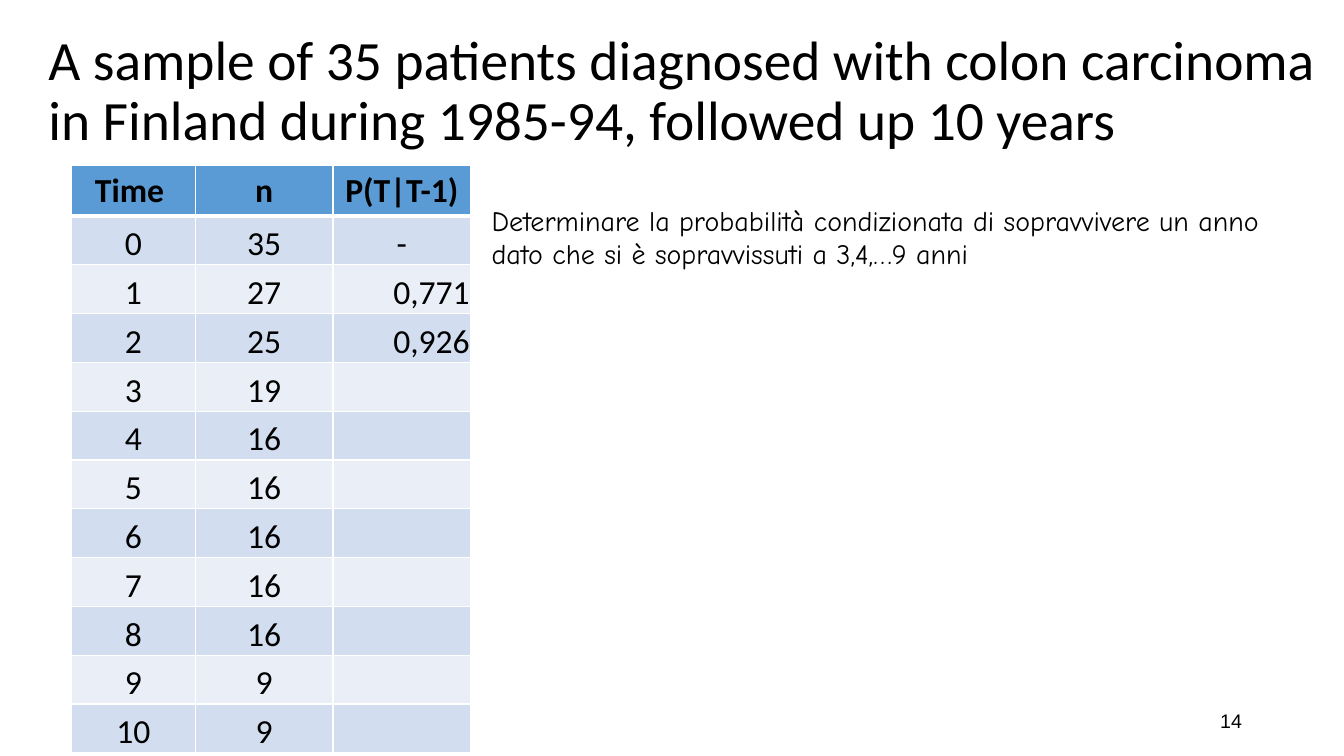
from dataclasses import dataclass

from lxml.etree import SubElement
from pptx import Presentation
from pptx.dml.color import RGBColor
from pptx.enum.text import MSO_ANCHOR as Anchor, PP_ALIGN as Align
from pptx.oxml.ns import qn
from pptx.util import Cm, Pt


@dataclass(frozen=True)
class Theme:
    text: str = "000000"
    border: str = "FFFFFF"
    header: str = "5B9BD5"
    bands: tuple = ("D2DEEF", "EAEFF7")
    body_font: str = "Calibri"
    number_font: str = "Arial"
    note_font: str = "Comic Neue"
    title_size: float = 39.6
    table_size: float = 24
    note_size: float = 20
    number_size: float = 14


THEME = Theme()

COLUMNS = ("Time ", "n", "P(T|T-1)")
SURVIVORS = (35, 27, 25, 19, 16, 16, 16, 16, 16, 9, 9)
PROBABILITIES = ("-", "0,771", "0,926")


def style_text(frame, font, size, align=Align.LEFT, bold=False):
    for paragraph in frame.paragraphs:
        paragraph.alignment = align
        for run in paragraph.runs:
            run.font.name = font
            run.font.size = Pt(size)
            run.font.bold = bold
            run.font.color.rgb = RGBColor.from_string(THEME.text)


def add_text(slide, box, text, font, size, align=Align.LEFT, anchor=Anchor.MIDDLE):
    shape = slide.shapes.add_textbox(*(Cm(length) for length in box))
    frame = shape.text_frame
    frame.word_wrap = True
    frame.vertical_anchor = anchor
    frame.text = text
    style_text(frame, font, size, align)
    return frame


def set_borders(cell, top=1, bottom=1):
    properties = cell._tc.get_or_add_tcPr()
    for side, width in (("L", 1), ("R", 1), ("T", top), ("B", bottom)):
        line = SubElement(properties, qn(f"a:ln{side}"), w=str(Pt(width)))
        fill = SubElement(line, qn("a:solidFill"))
        SubElement(fill, qn("a:srgbClr"), val=THEME.border)


def fill_cell(cell, text, color, align=Align.CENTER, bold=False):
    cell.fill.solid()
    cell.fill.fore_color.rgb = RGBColor.from_string(color)
    cell.text_frame.text = text
    style_text(cell.text_frame, THEME.body_font, THEME.table_size, align, bold)


def add_survival_table(slide):
    row_count = len(SURVIVORS) + 1
    frame = slide.shapes.add_table(
        row_count, len(COLUMNS), Cm(1.8), Cm(4.17), Cm(10.06), Cm(14.8))
    table = frame.table
    for column, width in zip(table.columns, (3.12, 3.47, 3.47)):
        column.width = Cm(width)
    for index, row in enumerate(table.rows):
        row.height = Cm(1.23 if index else 1.07)

    # Header
    for column, label in enumerate(COLUMNS):
        cell = table.cell(0, column)
        set_borders(cell, bottom=3)
        fill_cell(cell, label, THEME.header, bold=True)

    # One row for each year of follow-up
    for year, survivors in enumerate(SURVIVORS):
        probability = PROBABILITIES[year] if year < len(PROBABILITIES) else ""
        for column, text in enumerate((str(year), str(survivors), probability)):
            cell = table.cell(year + 1, column)
            cell.vertical_anchor = Anchor.BOTTOM
            cell.margin_left = cell.margin_right = cell.margin_top = Cm(0.02)
            cell.margin_bottom = Cm(0)
            set_borders(cell, top=1 if year else 3)
            is_decimal = column == 2 and year > 0
            fill_cell(cell, text, THEME.bands[year % 2],
                      Align.RIGHT if is_decimal else Align.CENTER)


def main():
    presentation = Presentation()
    presentation.slide_width, presentation.slide_height = Cm(33.87), Cm(19.05)
    slide = presentation.slides.add_slide(presentation.slide_layouts[6])

    # Title
    title = add_text(
        slide, (0.97, 0.15, 32.9, 4.37),
        "A sample of 35 patients diagnosed with colon carcinoma in Finland "
        "during 1985-94, followed up 10 years",
        THEME.body_font, THEME.title_size)
    title.paragraphs[0].line_spacing = 0.9

    add_survival_table(slide)

    # Slide number
    add_text(slide, (23.93, 17.65, 7.62, 1.02), "14",
             THEME.number_font, THEME.number_size, Align.RIGHT)

    # Exercise
    add_text(slide, (12.14, 5, 20.24, 1.96),
             "Determinare la probabilità condizionata di sopravvivere un anno "
             "dato che si è sopravvissuti a 3,4,…9 anni",
             THEME.note_font, THEME.note_size, anchor=Anchor.TOP)

    presentation.save("out.pptx")


if __name__ == "__main__":
    main()
